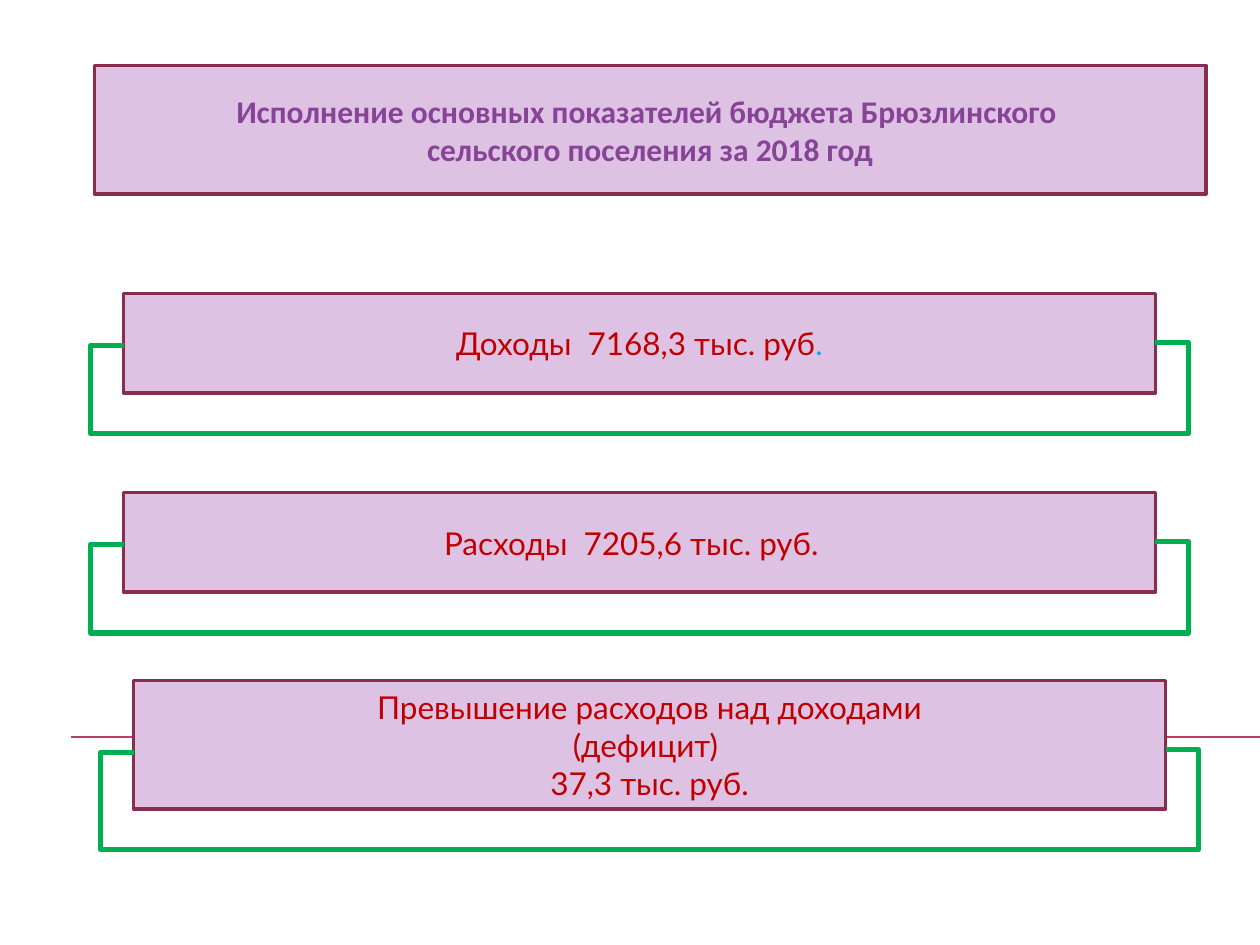
from lxml import etree
from pptx import Presentation
from pptx import util as u
from pptx.dml.color import RGBColor
from pptx.enum import shapes, text
from pptx.oxml.ns import qn

LILAC = RGBColor(0xDE, 0xC2, 0xE4)
WINE = RGBColor(0x88, 0x2D, 0x4D)
ROSE = RGBColor(0xB8, 0x3D, 0x68)
PURPLE = RGBColor(0x87, 0x43, 0x96)
RED = RGBColor(0xC0, 0x00, 0x00)
BLUE = RGBColor(0x00, 0xB0, 0xF0)
GREEN = RGBColor(0x00, 0xB0, 0x50)

TITLE = [[("Исполнение основных показателей бюджета Брюзлинского ", PURPLE)],
         [("сельского поселения за 2018 год", PURPLE)]]
INCOME = [[("Доходы  7168,3 тыс. руб", RED), (".", BLUE)]]
EXPENSES = [[("Расходы  7205,6 тыс. руб.  ", RED)]]
DEFICIT = [[("Превышение расходов над доходами", RED)],
           [("(дефицит) ", RED)],
           [("37,3 тыс. руб.", RED)]]


def style_box(sp, lines, font):
    """Give a box its fill, border and centred text."""
    sp.fill.solid()
    sp.fill.fore_color.rgb = LILAC
    sp.line.color.rgb = WINE
    sp.line.width = u.Pt(2)
    tf = sp.text_frame
    frame = {"word_wrap": True, "auto_size": text.MSO_AUTO_SIZE.NONE,
             "vertical_anchor": text.MSO_ANCHOR.MIDDLE}
    for name, value in frame.items():
        setattr(tf, name, value)
    for i, runs in enumerate(lines):
        p = tf.paragraphs[0] if i == 0 else tf.add_paragraph()
        p.alignment = text.PP_ALIGN.CENTER
        for words, color in runs:
            r = p.add_run()
            r.text = words
            r.font.color.rgb = color
            for name, value in font.items():
                setattr(r.font, name, value)


def add_line(s, kind, ends, color, width):
    """Draw a connector without a shadow between two points in inches."""
    cn = s.shapes.add_connector(kind, *(u.Inches(v) for v in ends))
    cn.line.color.rgb = color
    cn.line.width = u.Pt(width)
    etree.SubElement(cn._element.spPr, qn("a:effectLst"))
    return cn


def add_bracket(s, left, right, start, bottom):
    """Lead a green elbow line under a box from its left to its right side."""
    rise, reach = 0.02, 0.26
    cn = add_line(s, shapes.MSO_CONNECTOR.ELBOW,
                  (left, start, right, start - rise), GREEN, 3)
    xfrm = cn._element.spPr.find(qn("a:xfrm"))
    xfrm.attrib.pop("flipV", None)
    xfrm.set("rot", "10800000")
    xfrm.set("flipH", "1")
    geom = cn._element.spPr.find(qn("a:prstGeom"))
    geom.set("prst", "bentConnector5")
    guides = geom.find(qn("a:avLst"))
    share = reach / (right - left)
    for i, value in enumerate((-share, (start - bottom) / rise, 1 + share), 1):
        etree.SubElement(guides, qn("a:gd"), name=f"adj{i}",
                         fmla=f"val {round(value * 100000)}")


def add_title(s, box, lines):
    """Place the framed title."""
    sp = s.shapes.title
    for name, value in zip(("left", "top", "width", "height"), box):
        setattr(sp, name, u.Inches(value))
    style_box(sp, lines, {"name": "Calibri", "size": u.Pt(18), "bold": True})


def add_indicator(s, box, lead, lines):
    """Place a budget figure with the bracket that starts at lead below its top."""
    left, top, width, height = box
    sp = s.shapes.add_shape(shapes.MSO_SHAPE.RECTANGLE, *(u.Inches(v) for v in box))
    sp.shadow.inherit = False
    style_box(sp, lines, {"name": "Lato", "size": u.Pt(18)})
    add_bracket(s, left, left + width, top + lead, top + height + 0.32)


def main():
    """Build the slide and save it."""
    prs = Presentation()
    prs.slide_width, prs.slide_height = u.Inches(10), u.Inches(7.5)
    s = prs.slides.add_slide(prs.slide_layouts[5])
    add_line(s, shapes.MSO_CONNECTOR.STRAIGHT, (0.56, 5.85, 10, 5.85), ROSE, 0.75)
    add_title(s, (0.75, 0.52, 8.82, 1.02), TITLE)
    add_indicator(s, (0.98, 2.33, 8.19, 0.79), 0.41, INCOME)
    add_indicator(s, (0.98, 3.91, 8.19, 0.79), 0.41, EXPENSES)
    add_indicator(s, (1.06, 5.4, 8.19, 1.02), 0.57, DEFICIT)
    prs.save("out.pptx")


if __name__ == "__main__":
    main()
